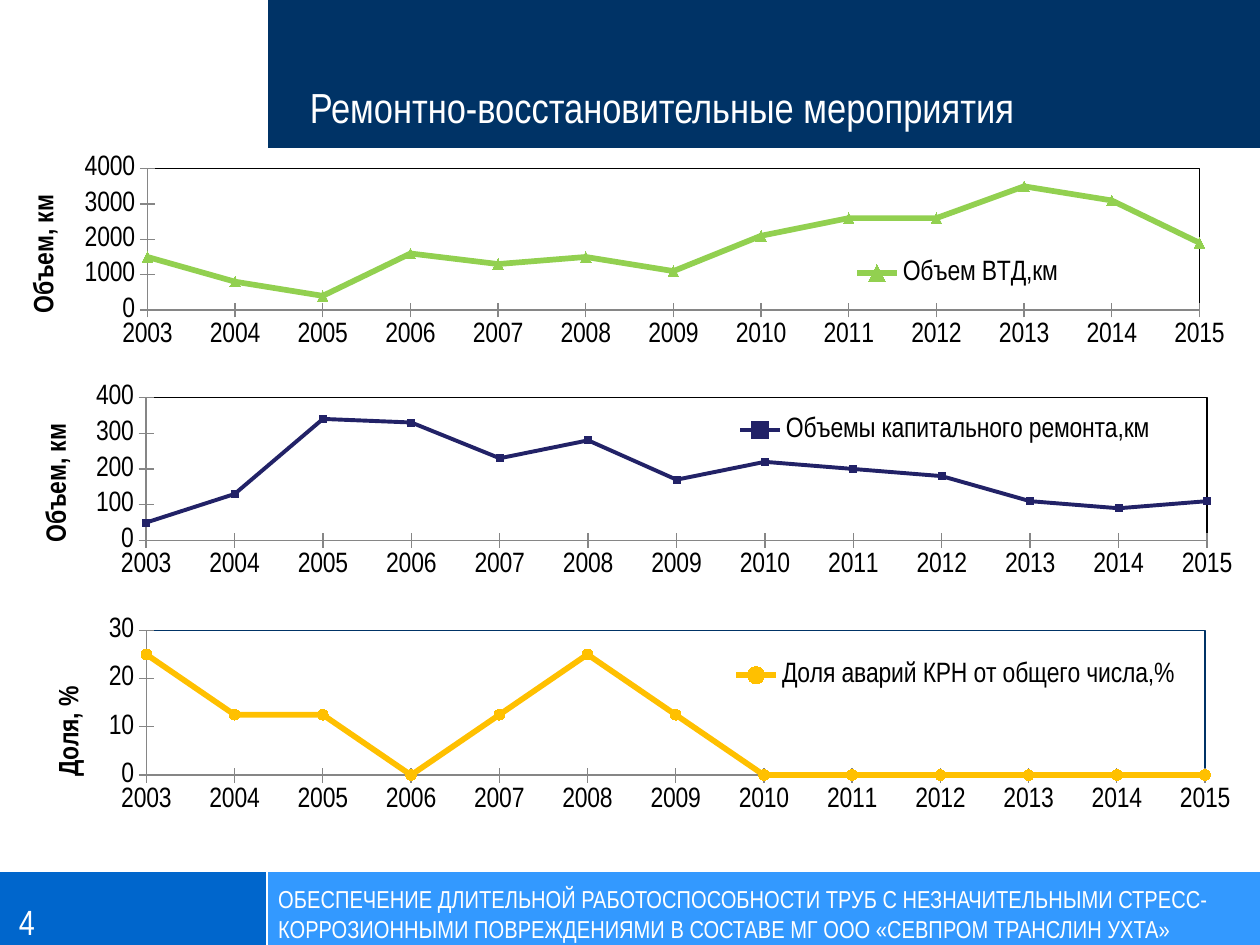
from dataclasses import dataclass

from lxml import etree
from pptx import Presentation
from pptx.chart.data import XyChartData
from pptx.dml.color import RGBColor
from pptx.enum.chart import XL_CHART_TYPE, XL_LEGEND_POSITION, XL_MARKER_STYLE, XL_TICK_MARK
from pptx.enum.shapes import MSO_CONNECTOR, MSO_SHAPE
from pptx.enum.text import MSO_ANCHOR
from pptx.oxml.ns import qn
from pptx.util import Cm, Pt

SCATTER = XL_CHART_TYPE.XY_SCATTER_LINES
RIGHT = XL_LEGEND_POSITION.RIGHT
CIRCLE = XL_MARKER_STYLE.CIRCLE
SQUARE = XL_MARKER_STYLE.SQUARE
TRIANGLE = XL_MARKER_STYLE.TRIANGLE
CROSS = XL_TICK_MARK.CROSS
STRAIGHT = MSO_CONNECTOR.STRAIGHT
RECT = MSO_SHAPE.RECTANGLE
TOP, BOTTOM = MSO_ANCHOR.TOP, MSO_ANCHOR.BOTTOM

WIDTH, HEIGHT = 25.4, 19.05
SPLIT, HEAD, FOOT = 5.38, 3.0, 17.55
YEARS = range(2003, 2016)


@dataclass(frozen=True)
class Theme:
    font: str = "Arial Narrow"
    white: str = "FFFFFF"
    black: str = "000000"
    navy: str = "003366"
    blue: str = "0066CC"
    sky: str = "3399FF"
    axis: str = "868686"
    green: str = "92D050"
    indigo: str = "222267"
    amber: str = "FFC000"
    title: int = 24
    number: int = 20
    label: int = 16
    footer: int = 14
    chart: int = 10


THEME = Theme()


@dataclass
class Trend:
    """One chart; plot, legend and title are fractions of the chart area."""
    box: tuple
    name: str
    unit: str
    values: tuple
    top: int
    step: int
    color: str
    width: float
    marker: int
    size: int
    plot: tuple
    legend: tuple
    title: tuple
    frame: str = THEME.black


TRENDS = (
    Trend((0.51, 12.45, 25.17, 4.95), "Доля аварий КРН от общего числа,%", "Доля, %",
          (25, 12.5, 12.5, 0, 12.5, 25, 12.5, 0, 0, 0, 0, 0, 0), 30, 10,
          THEME.amber, 3.25, CIRCLE, 6, (0.097, 0.052, 0.848, 0.59),
          (0.56, 0.16, 0.37, 0.15), (0.02, 0.26), THEME.navy),
    Trend((0, 3.15, 25.4, 4.85), "Объем ВТД,км", "Объем, км",
          (1500, 800, 400, 1600, 1300, 1500, 1100, 2100, 2600, 2600, 3500, 3100, 1900),
          4000, 1000, THEME.green, 3.25, TRIANGLE, 6, (0.117, 0.05, 0.835, 0.589),
          (0.67, 0.41, 0.18, 0.15), (0.02, 0.14)),
    Trend((0, 7.7, 25.4, 4.98), "Объемы капитального ремонта,км", "Объем, км",
          (50, 130, 340, 330, 230, 280, 170, 220, 200, 180, 110, 90, 110),
          400, 100, THEME.indigo, 2.25, SQUARE, 4, (0.116, 0.063, 0.842, 0.579),
          (0.58, 0.12, 0.34, 0.15), (0.03, 0.15)),
)


def rgb(color):
    return RGBColor.from_string(color)


def style(font, size, color, bold=False):
    font.name, font.size, font.bold = THEME.font, Pt(size), bold
    font.color.rgb = rgb(color)


def add_band(slide, box, color):
    band = slide.shapes.add_shape(RECT, *map(Cm, box))
    band.shadow.inherit = False
    band.fill.solid()
    band.fill.fore_color.rgb = rgb(color)
    band.line.fill.background()


def add_rule(slide, ends):
    rule = slide.shapes.add_connector(STRAIGHT, *map(Cm, ends))
    rule.line.color.rgb = rgb(THEME.white)
    rule.line.width = Pt(1.25)
    etree.SubElement(rule._element.spPr, qn("a:effectLst"))


def add_text(slide, box, text, size, anchor, inset=True):
    frame = slide.shapes.add_textbox(*map(Cm, box)).text_frame
    frame.word_wrap = True
    frame.vertical_anchor = anchor
    if not inset:
        frame.margin_left = frame.margin_right = 0
        frame.margin_top = frame.margin_bottom = 0
    frame.text = text
    style(frame.paragraphs[0].runs[0].font, size, THEME.white)


def place(part, spot, after=None, inner=False):
    """Give a chart part a manual layout, put after the named child."""
    for old in part.findall(qn("c:layout")):
        part.remove(old)
    layout = etree.Element(qn("c:layout"))
    manual = etree.SubElement(layout, qn("c:manualLayout"))
    rules = [("layoutTarget", "inner")] if inner else []
    rules += [("xMode", "edge"), ("yMode", "edge")]
    rules += zip("xywh", spot)
    for key, value in rules:
        etree.SubElement(manual, qn("c:" + key), val=str(value))
    if after:
        part.find(qn(after)).addnext(layout)
    else:
        part.insert(0, layout)


def frame_plot(area, color):
    props = etree.SubElement(area, qn("c:spPr"))
    etree.SubElement(props, qn("a:noFill"))
    line = etree.SubElement(props, qn("a:ln"), w=str(Pt(0.75)))
    fill = etree.SubElement(line, qn("a:solidFill"))
    etree.SubElement(fill, qn("a:srgbClr"), val=color)


def set_axis(axis, low, high, step):
    axis.minimum_scale, axis.maximum_scale = low, high
    axis.major_unit = step
    axis.has_major_gridlines = False
    axis.major_tick_mark = CROSS
    axis.format.line.color.rgb = rgb(THEME.axis)
    axis.tick_labels.number_format = "General"
    axis.tick_labels.number_format_is_linked = False
    style(axis.tick_labels.font, THEME.label, THEME.black)


def name_axis(axis, text, spot):
    title = axis.axis_title
    title.text_frame.text = text
    style(title.text_frame.paragraphs[0].runs[0].font, THEME.label, THEME.black, True)
    body = next(title._element.iter(qn("a:bodyPr")))
    body.set("rot", "-5400000")
    body.set("vert", "horz")
    place(title._element, spot, "c:tx")


def add_trend(slide, trend):
    data = XyChartData()
    points = data.add_series(trend.name)
    for year, value in zip(YEARS, trend.values):
        points.add_data_point(year, value)
    chart = slide.shapes.add_chart(SCATTER, *map(Cm, trend.box), data).chart
    chart.has_title = False
    style(chart.font, THEME.chart, THEME.black)
    set_axis(chart.category_axis, YEARS[0], YEARS[-1], 1)
    set_axis(chart.value_axis, 0, trend.top, trend.step)
    name_axis(chart.value_axis, trend.unit, trend.title)

    plot = chart.plots[0]
    plot.vary_by_categories = False
    series = plot.series[0]
    series.format.line.color.rgb = rgb(trend.color)
    series.format.line.width = Pt(trend.width)
    series.marker.style, series.marker.size = trend.marker, trend.size
    series.marker.format.fill.solid()
    series.marker.format.fill.fore_color.rgb = rgb(trend.color)
    series.marker.format.line.color.rgb = rgb(trend.color)

    chart.has_legend = True
    chart.legend.position = RIGHT
    chart.legend.include_in_layout = False
    style(chart.legend.font, THEME.label, THEME.black)
    place(chart.legend._element, trend.legend, "c:legendPos")
    area = chart._chartSpace.chart.plotArea
    place(area, trend.plot, inner=True)
    frame_plot(area, trend.frame)


def main():
    deck = Presentation()
    deck.slide_width, deck.slide_height = Cm(WIDTH), Cm(HEIGHT)
    slide = deck.slides.add_slide(deck.slide_layouts[6])
    add_band(slide, (0, FOOT, SPLIT, HEIGHT - FOOT), THEME.blue)
    add_band(slide, (SPLIT, FOOT, WIDTH - SPLIT, HEIGHT - FOOT), THEME.sky)
    add_band(slide, (SPLIT, 0, WIDTH - SPLIT, HEAD), THEME.navy)
    for start, end in ((FOOT, HEIGHT), (0, HEAD)):
        add_rule(slide, (SPLIT, start, SPLIT, end))
    for level in (FOOT, HEAD):
        add_rule(slide, (0, level, WIDTH, level))
    add_text(slide, (6, 0, 19.69, 2.79), "Ремонтно-восстановительные мероприятия",
             THEME.title, BOTTOM)
    add_text(slide, (5.36, 17.7, 20.04, 1.45),
             "ОБЕСПЕЧЕНИЕ ДЛИТЕЛЬНОЙ РАБОТОСПОСОБНОСТИ ТРУБ С НЕЗНАЧИТЕЛЬНЫМИ "
             "СТРЕСС-КОРРОЗИОННЫМИ ПОВРЕЖДЕНИЯМИ В СОСТАВЕ МГ ООО «СЕВПРОМ ТРАНСЛИН УХТА»",
             THEME.footer, TOP)
    for trend in TRENDS:
        add_trend(slide, trend)
    add_text(slide, (0.38, 17.68, 4.98, 1.32), "4", THEME.number, BOTTOM, inset=False)
    deck.save("out.pptx")


if __name__ == "__main__":
    main()
